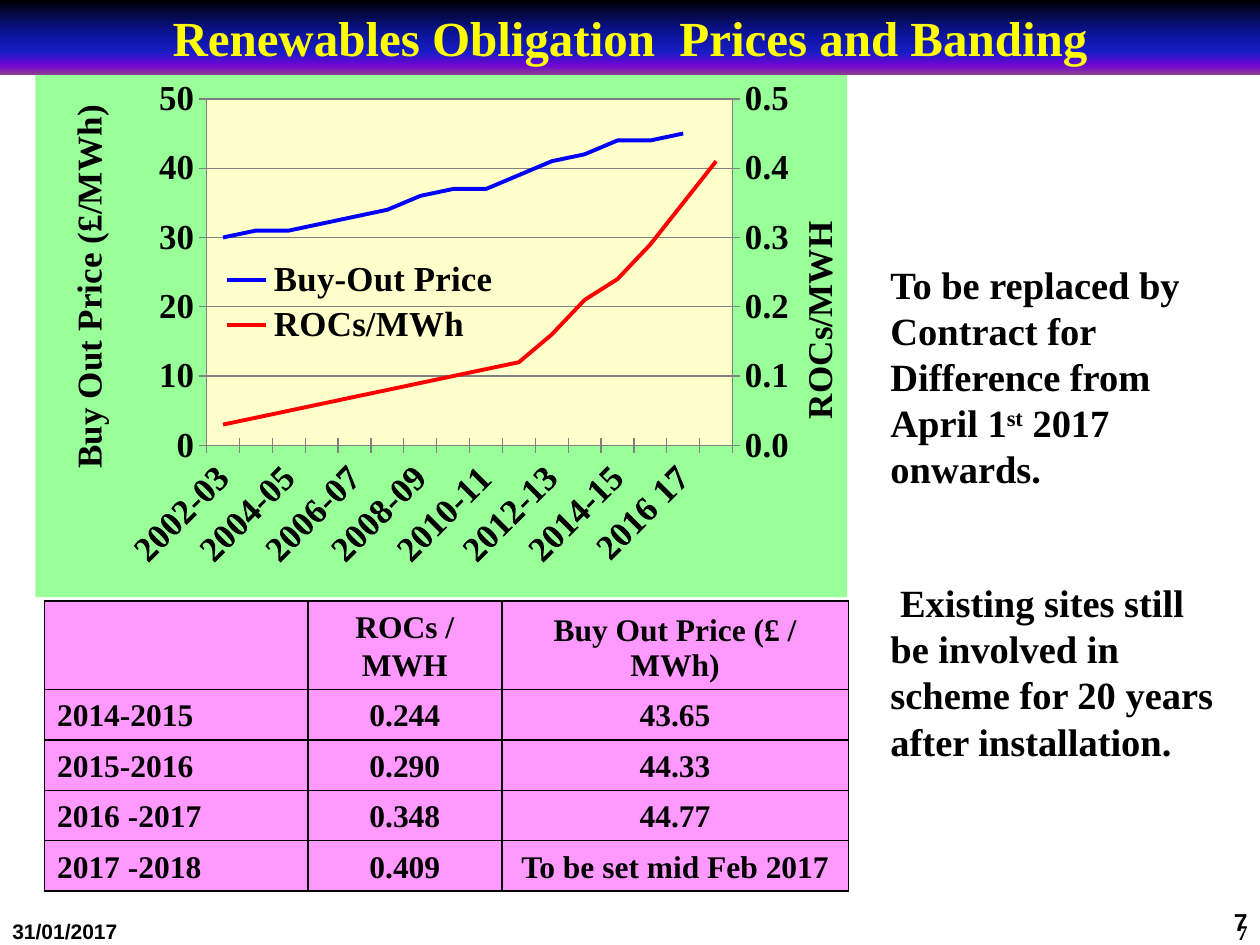
from copy import deepcopy
from typing import NamedTuple

from pptx import Presentation
from pptx.chart.axis import ValueAxis
from pptx.chart.data import CategoryChartData
from pptx.dml.color import RGBColor
from pptx.enum.chart import XL_CHART_TYPE, XL_LEGEND_POSITION, XL_TICK_MARK
from pptx.enum.shapes import MSO_SHAPE
from pptx.enum.text import MSO_ANCHOR, PP_ALIGN
from pptx.oxml import parse_xml
from pptx.oxml.ns import nsdecls, qn
from pptx.util import Pt

BLACK = RGBColor(0x00, 0x00, 0x00)
YELLOW = RGBColor(0xFF, 0xFF, 0x00)
BLUE = RGBColor(0x00, 0x00, 0xFF)
RED = RGBColor(0xFF, 0x00, 0x00)
GREY = RGBColor(0x80, 0x80, 0x80)
PINK = RGBColor(0xFF, 0x99, 0xFF)
GREEN = RGBColor(0x99, 0xFF, 0x99)
CREAM = RGBColor(0xFF, 0xFF, 0xCC)
BANNER_STOPS = [(0, "000000"), (40, "0A128C"), (70, "181CC7"), (88, "7005D4"), (100, "8C3D91")]
SERIF, SANS = "Times New Roman", "Arial"


class Box(NamedTuple):
    left: float
    top: float
    width: float
    height: float

    def lengths(self):
        return [Pt(length) for length in self]


class Footer(NamedTuple):
    text: str
    box: Box
    font: str
    size: float
    align: PP_ALIGN
    anchor: MSO_ANCHOR


class AxisSpec(NamedTuple):
    title: str
    title_at: tuple
    top: float
    step: float
    number_format: str
    grid: bool


PAGE_NUMBER = Footer("7", Box(686.2, 525.6, 33.8, 14.4), SERIF, 12, PP_ALIGN.RIGHT, MSO_ANCHOR.MIDDLE)
DATE_AND_NUMBER = [
    Footer("31/01/2017", Box(0, 521.3, 167.8, 37.4), SANS, 12, PP_ALIGN.LEFT, MSO_ANCHOR.TOP),
    Footer("7", Box(552.2, 514.8, 167.8, 37.4), SANS, 14, PP_ALIGN.RIGHT, MSO_ANCHOR.TOP),
]
PRICE_AXIS = AxisSpec("Buy Out Price (£/MWh)", (0.03, 0.06), 50, 10, "0", True)
ROC_AXIS = AxisSpec("ROCs/MWH", (0.93, 0.28), 0.5, 0.1, "#,##0.0", False)

YEARS = [f"{year}-{(year + 1) % 100:02d}" for year in range(2002, 2016)] + ["2016 17", "2017 18"]
PRICES = [30, 31, 31, 32, 33, 34, 36, 37, 37, 39, 41, 42, 44, 44, 45, None]
ROCS = [0.03, 0.04, 0.05, 0.06, 0.07, 0.08, 0.09, 0.1, 0.11, 0.12, 0.16, 0.21, 0.24, 0.29, 0.35, 0.41]

BANDING = [
    ("", "ROCs / MWH", "Buy Out Price (£ / MWh)"),
    ("2014-2015", "0.244", "43.65"),
    ("2015-2016", "0.290", "44.33"),
    ("2016 -2017", "0.348", "44.77"),
    ("2017 -2018", "0.409", "To be set mid Feb 2017"),
]


def set_font(font, size: float, name: str = SERIF, color: RGBColor = BLACK) -> None:
    font.size, font.name, font.bold = Pt(size), name, True
    font.color.rgb = color


def draw_footer(slide, footer: Footer) -> None:
    frame = slide.shapes.add_textbox(*footer.box.lengths()).text_frame
    frame.word_wrap = True
    frame.vertical_anchor = footer.anchor
    line = frame.paragraphs[0]
    line.text, line.alignment = footer.text, footer.align
    set_font(line.font, footer.size, footer.font)


def draw_banner(slide) -> None:
    banner = slide.shapes.add_shape(MSO_SHAPE.RECTANGLE, *Box(0, 0, 720, 42.5).lengths())
    banner.shadow.inherit = False
    banner.line.fill.background()
    banner.fill.gradient()
    banner.fill.gradient_angle = 270
    stops = banner.fill._fill._gradFill.find(qn("a:gsLst"))
    for stop in list(stops):
        stops.remove(stop)
    for percent, color in BANNER_STOPS:
        stops.append(parse_xml(f'<a:gs {nsdecls("a")} pos="{percent * 1000}"><a:srgbClr val="{color}"/></a:gs>'))
    heading = banner.text_frame.paragraphs[0]
    heading.text, heading.alignment = "Renewables Obligation  Prices and Banding", PP_ALIGN.CENTER
    set_font(heading.font, 28, color=YELLOW)


def draw_table(slide) -> None:
    widths, heights = [150.5, 110.9, 198], [50.6] + [28.8] * 4
    table = slide.shapes.add_table(5, 3, *Box(25.4, 343.4, sum(widths), sum(heights)).lengths()).table
    table.first_row = table.horz_banding = False
    for column, width in zip(table.columns, widths):
        column.width = Pt(width)
    for row, height in zip(table.rows, heights):
        row.height = Pt(height)
    for r, texts in enumerate(BANDING):
        for c, text in enumerate(texts):
            cell = table.cell(r, c)
            for side in "LRTB":
                cell._tc.get_or_add_tcPr().append(parse_xml(
                    f'<a:ln{side} {nsdecls("a")} w="12700"><a:solidFill>'
                    f'<a:srgbClr val="{BLACK}"/></a:solidFill></a:ln{side}>'))
            cell.fill.solid()
            cell.fill.fore_color.rgb = PINK
            cell.vertical_anchor = MSO_ANCHOR.BOTTOM
            entry = cell.text_frame.paragraphs[0]
            entry.text = text
            entry.alignment = PP_ALIGN.CENTER if c else PP_ALIGN.LEFT
            entry.line_spacing = Pt(21.6 if (r, c) == (0, 1) else 20)
            set_font(entry.font, 18)


def draw_notes(slide) -> None:
    frame = slide.shapes.add_textbox(*Box(501.8, 145.4, 198.7, 324.7).lengths()).text_frame
    frame.word_wrap = True
    replaced, existing = frame.paragraphs[0], frame.add_paragraph()
    for piece in ("To be replaced by Contract for Difference from April 1", "st", " 2017 onwards."):
        run = replaced.add_run()
        run.text = piece
        if piece == "st":
            run.font._element.set("baseline", "30000")
    existing.text = " Existing sites still be involved in scheme for 20 years after installation."
    existing.space_before = Pt(50)
    for note in (replaced, existing):
        note.line_spacing = Pt(26.4)
        set_font(note.font, 22)


def place(part, left: float, top: float, size: tuple = (), inner: bool = False) -> None:
    """Fix a chart part at fractions of the chart area."""
    for old in part.findall(qn("c:layout")):
        part.remove(old)
    fields = [("layoutTarget", "inner")] if inner else []
    fields += [("xMode", "edge"), ("yMode", "edge"), ("x", left), ("y", top), *zip("wh", size)]
    body = "".join(f'<c:{tag} val="{value}"/>' for tag, value in fields)
    layout = parse_xml(f'<c:layout {nsdecls("c")}><c:manualLayout>{body}</c:manualLayout></c:layout>')
    overlay = part.find(qn("c:overlay"))
    part.insert(0 if overlay is None else part.index(overlay), layout)


def area_fill(color: RGBColor):
    return parse_xml(f'<c:spPr {nsdecls("c", "a")}><a:solidFill><a:srgbClr val="{color}"/></a:solidFill>'
                     '<a:ln><a:noFill/></a:ln></c:spPr>')


def style_axis(axis) -> None:
    axis.major_tick_mark = XL_TICK_MARK.CROSS
    axis.minor_tick_mark = XL_TICK_MARK.NONE
    axis.format.line.color.rgb = GREY
    set_font(axis.tick_labels.font, 20)


def style_value_axis(axis: ValueAxis, look: AxisSpec) -> None:
    style_axis(axis)
    axis.minimum_scale, axis.maximum_scale, axis.major_unit = 0, look.top, look.step
    axis.tick_labels.number_format = look.number_format
    axis.tick_labels.number_format_is_linked = False
    axis.has_major_gridlines = look.grid
    if look.grid:
        axis.major_gridlines.format.line.color.rgb = GREY
    frame = axis.axis_title.text_frame
    frame.text = look.title
    frame._txBody.bodyPr.set("rot", "-5400000")
    set_font(frame.paragraphs[0].font, 20)
    place(axis.axis_title._element, *look.title_at)


def add_right_axis(plot_area) -> ValueAxis:
    """Move the second series to a line plot with its own axes."""
    left_plot = plot_area.find(qn("c:lineChart"))
    right_plot = deepcopy(left_plot)
    left_plot.remove(left_plot.findall(qn("c:ser"))[1])
    right_plot.remove(right_plot.find(qn("c:ser")))
    left_plot.addnext(right_plot)
    years, price = plot_area.find(qn("c:catAx")), plot_area.find(qn("c:valAx"))
    hidden_years, rocs = deepcopy(years), deepcopy(price)
    price.addnext(rocs)
    rocs.addnext(hidden_years)
    for ref, number in zip(right_plot.findall(qn("c:axId")), ("5001", "5002")):
        ref.set("val", number)
    for axis, own, other in ((hidden_years, "5001", "5002"), (rocs, "5002", "5001")):
        axis.find(qn("c:axId")).set("val", own)
        axis.find(qn("c:crossAx")).set("val", other)
    hidden_years.find(qn("c:delete")).set("val", "1")
    rocs.find(qn("c:axPos")).set("val", "r")
    rocs.find(qn("c:crosses")).set("val", "max")
    return ValueAxis(rocs)


def draw_chart(slide) -> None:
    data = CategoryChartData()
    data.categories = YEARS
    data.add_series("Buy-Out Price", PRICES)
    data.add_series("ROCs/MWh", ROCS)
    chart = slide.shapes.add_chart(XL_CHART_TYPE.LINE, *Box(20.2, 37.4, 465.8, 303.8).lengths(), data).chart
    chart.has_title = False
    set_font(chart.font, 10)
    chart.font._element.getparent().getparent().getparent().addprevious(area_fill(GREEN))
    for series, color in zip(chart.plots[0].series, (BLUE, RED)):
        series.smooth = False
        series.format.line.color.rgb = color
        series.format.line.width = Pt(2.25)
    chart.plots[0].vary_by_categories = False

    # Axes
    plot_area = chart._chartSpace.chart.plotArea
    price_axis, years = chart.value_axis, chart.category_axis
    roc_axis = add_right_axis(plot_area)
    style_value_axis(price_axis, PRICE_AXIS)
    style_value_axis(roc_axis, ROC_AXIS)
    style_axis(years)
    years._element.find(qn("c:txPr")).find(qn("a:bodyPr")).set("rot", "-2700000")
    skip = parse_xml(f'<c:tickLblSkip {nsdecls("c")} val="2"/>')
    years._element.find(qn("c:noMultiLvlLbl")).addprevious(skip)
    place(plot_area, 0.211, 0.063, (0.648, 0.652), inner=True)
    plot_area.append(area_fill(CREAM))

    # Legend
    chart.has_legend = True
    chart.legend.position = XL_LEGEND_POSITION.RIGHT
    chart.legend.include_in_layout = True
    set_font(chart.legend.font, 20)
    place(chart.legend._element, 0.227, 0.356, (0.345, 0.18))


def main() -> None:
    deck = Presentation()
    deck.slide_width, deck.slide_height = Pt(720), Pt(540)
    slide = deck.slides.add_slide(deck.slide_layouts[6])
    draw_footer(slide, PAGE_NUMBER)
    draw_table(slide)
    draw_notes(slide)
    draw_chart(slide)
    draw_banner(slide)
    for footer in DATE_AND_NUMBER:
        draw_footer(slide, footer)
    deck.save("out.pptx")


if __name__ == "__main__":
    main()
